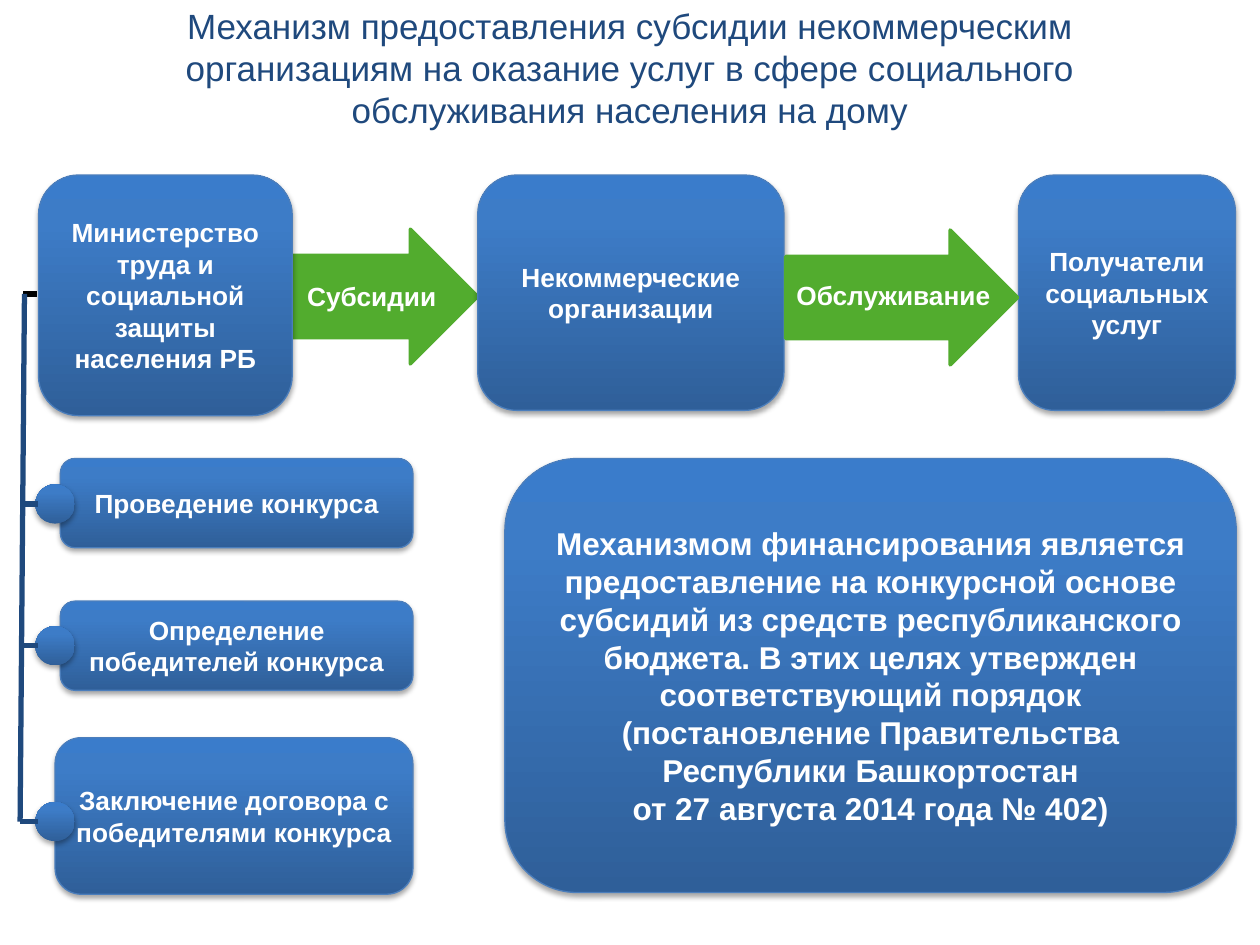
from lxml.etree import SubElement
from pptx import Presentation
from pptx.dml.color import RGBColor
from pptx.enum.shapes import MSO_CONNECTOR, MSO_SHAPE
from pptx.enum.text import MSO_ANCHOR, PP_ALIGN
from pptx.oxml.ns import qn
from pptx.util import Pt

NAVY, WHITE, BLACK = "1F497D", "FFFFFF", "000000"
GREEN, EDGE = "52AC2E", "4B7EBC"
STOPS = ((0, "2F5F99"), (80, "3D7CC7"), (100, "3A7CCB"))


def color(code):
    return RGBColor.from_string(code)


def node(parent, tag, **attrs):
    return SubElement(parent, qn(tag), attrs)


def write(shape, lines, size, code=WHITE, bold=True, align=PP_ALIGN.CENTER,
          anchor=MSO_ANCHOR.MIDDLE, wrap=True):
    frame = shape.text_frame
    frame.word_wrap = wrap
    frame.vertical_anchor = anchor
    for i, line in enumerate(lines):
        para = frame.paragraphs[0] if i == 0 else frame.add_paragraph()
        para.alignment = align
        run = para.add_run()
        run.text = line
        run.font.name = "Arial"
        run.font.size = Pt(size)
        run.font.bold = bold
        run.font.color.rgb = color(code)
    return frame


def add_label(slide, box, lines, size, **style):
    label = slide.shapes.add_textbox(*map(Pt, box))
    return write(label, lines, size, **style)


def add_glossy(slide, kind, box):
    """Add a shape with the blue gradient and a soft shadow below."""
    shape = slide.shapes.add_shape(kind, *map(Pt, box))
    shape.fill.gradient()
    shape.fill.gradient_angle = 90
    stops = shape._element.spPr.find(".//" + qn("a:gsLst"))
    for old in list(stops):
        stops.remove(old)
    for place, code in STOPS:
        stop = node(stops, "a:gs", pos=str(place * 1000))
        node(stop, "a:srgbClr", val=code)
    shape.line.fill.background()
    shape.shadow.inherit = False
    effects = shape._element.spPr.find(qn("a:effectLst"))
    shadow = node(effects, "a:outerShdw", blurRad=str(Pt(3.1)), dist=str(Pt(1.8)),
                  dir="5400000", rotWithShape="0")
    tint = node(shadow, "a:srgbClr", val=BLACK)
    node(tint, "a:alpha", val="35000")
    return shape


def add_card(slide, box, lines, size=15):
    card = add_glossy(slide, MSO_SHAPE.ROUNDED_RECTANGLE, box)
    card.line.color.rgb = color(EDGE)
    card.line.width = Pt(0.75)
    write(card, lines, size)


def add_arrow(slide, box):
    arrow = slide.shapes.add_shape(MSO_SHAPE.RIGHT_ARROW, *map(Pt, box))
    arrow.adjustments[0] = 0.61
    arrow.fill.solid()
    arrow.fill.fore_color.rgb = color(GREEN)
    arrow.line.color.rgb = color(GREEN)
    arrow.line.width = Pt(2)
    arrow.shadow.inherit = False


def add_line(slide, start, end, code=NAVY):
    line = slide.shapes.add_connector(
        MSO_CONNECTOR.STRAIGHT, *map(Pt, (*start, *end)))
    line.line.color.rgb = color(code)
    line.line.width = Pt(3)
    node(line._element.spPr, "a:effectLst")


def add_title(slide, box):
    frame = add_label(slide, box, (
        "Механизм предоставления субсидии некоммерческим",
        "организациям на оказание услуг в сфере социального",
        "обслуживания населения на дому"), 20, code=NAVY, bold=False)
    frame.margin_left = frame.margin_right = Pt(6)
    frame.margin_top = frame.margin_bottom = Pt(3)


def add_flow(slide, box):
    """Add three cards in a row, joined by two labelled arrows."""
    left, top, width, height = box
    cards = (
        (0, 145, height + 3, ("Министерство", "труда и социальной",
                              "защиты населения РБ")),
        (251, 175, height, ("Некоммерческие организации",)),
        (width - 124, 124, height, ("Получатели социальных услуг",)))
    add_arrow(slide, (left + 145, top + 31, 106, 77))
    for shift, wide, high, lines in cards:
        add_card(slide, (left + shift, top, wide, high), lines)
    add_arrow(slide, (left + 427, top + 31.5, 132.5, 77))
    add_label(slide, (left + 146.5, top + 56.5, 105, 25), ("Субсидии",), 15,
              align=PP_ALIGN.LEFT, anchor=MSO_ANCHOR.TOP)
    frame = add_label(slide, (left + 425, top + 58, 127, 24), ("Обслуживание",), 15,
                      anchor=MSO_ANCHOR.TOP, wrap=False)
    frame.paragraphs[0].line_spacing = 0.9


def add_steps(slide, box):
    """Add the contest steps, hung on a trunk line that starts at the ministry."""
    left, top, width, height = box
    steps = (
        (23, 158, 51, "Проведение конкурса"),
        (23, 239.5, 51, "Определение победителей конкурса"),
        (20, 317.5, 89.5, "Заключение договора с победителями конкурса"))
    for shift, drop, high, line in steps:
        add_card(slide, (left + shift, top + drop, width - shift, high), (line,))
    knots = (top + 184, top + 265, top + 365.5)
    for y in knots:
        add_glossy(slide, MSO_SHAPE.OVAL, (left + 8.75, y - 11.25, 22.5, 22.5))
    add_line(slide, (left + 9.5, top + 64), (left + 1.5, top + 64), BLACK)
    add_line(slide, (left + 2.5, top + 64), (left, top + height))
    for y in knots:
        add_line(slide, (left, y), (left + 10, y))


def add_note(slide, box):
    add_card(slide, box, (
        "Механизмом финансирования является предоставление на конкурсной основе "
        "субсидий из средств республиканского бюджета. В этих целях утвержден "
        "соответствующий порядок (постановление Правительства Республики Башкортостан",
        "от 27 августа 2014 года № 402)"), 18)


def main():
    deck = Presentation()
    deck.slide_width, deck.slide_height = Pt(720), Pt(540)
    slide = deck.slides.add_slide(deck.slide_layouts[6])
    add_title(slide, (0, -0.5, 720, 78.5))
    add_flow(slide, (22, 100, 684, 134.5))
    add_steps(slide, (11.5, 104, 224.5, 365.5))
    add_note(slide, (288.5, 262, 418, 248))
    deck.save("out.pptx")


if __name__ == "__main__":
    main()
